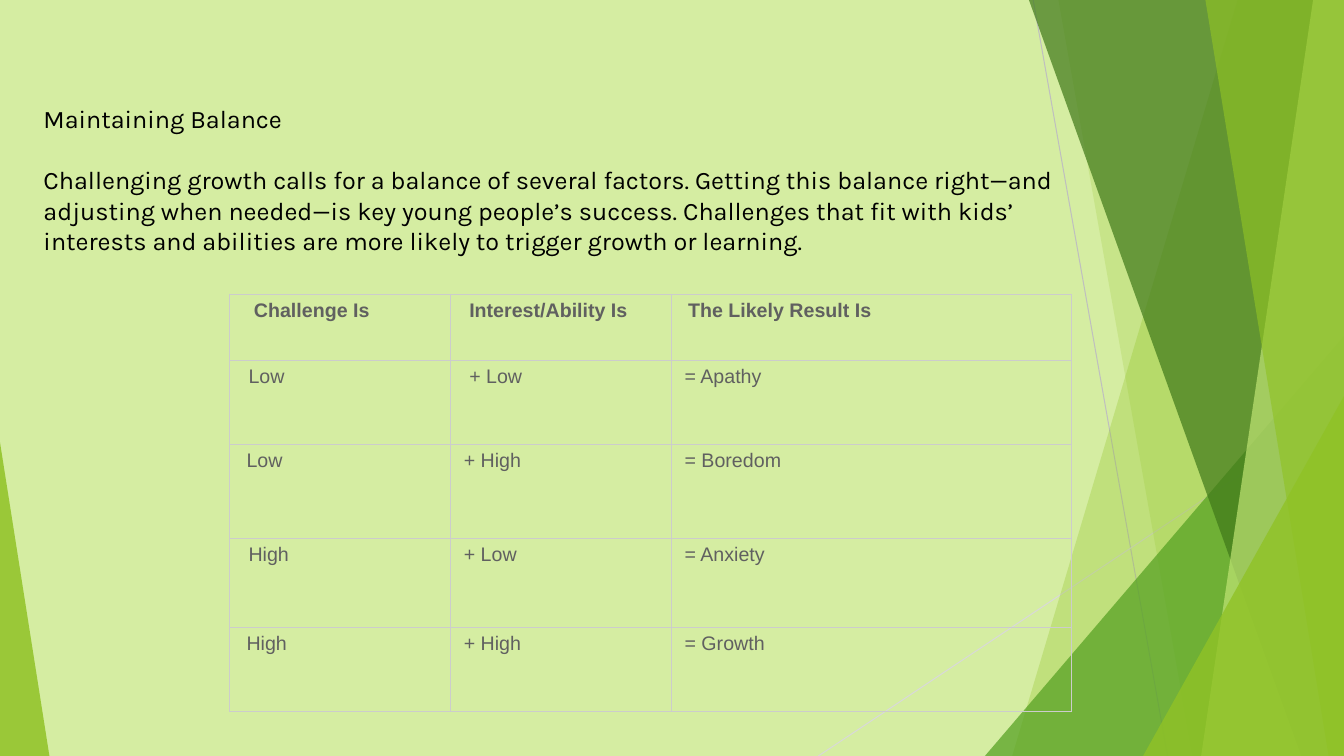
import pptx
import pptx.dml.color
import pptx.enum.shapes
import pptx.enum.text
import pptx.oxml.ns
import pptx.util
from lxml import etree

Pt = pptx.util.Pt
qn = pptx.oxml.ns.qn

COLORS = {
    "page": "D5EDA2", "lime": "90C226", "green": "54A021", "dark": "3F7819",
    "pale": "C0E474", "gray": "BFBFBF", "light": "D9D9D9", "grid": "CCCCCC",
    "cell": "606060", "text": "000000",
}

# Slanted bands: x at the top, x at the foot, colour, opacity in percent
BACK = [(884, 723, "lime", 30), (756, 852, "lime", 20)]
FRONT = [(735, 929.5, "dark", 70), (938, 858, "pale", 70), (861, 949, "lime", 65)]

COLS = [157.7, 157.7, 285.8]
ROWS = [47.5, 59.8, 67, 64.1, 59.8]
# Each cell: text, extra indent
CELLS = [
    [("Challenge Is", 7.8), ("Interest/Ability Is", 3.9), ("The Likely Result Is", 2.5)],
    [("Low", 3.9), ("+ Low", 3.9), ("= Apathy", 0)],
    [("Low", 2.5), ("+ High", 0), ("= Boredom", 0)],
    [("High", 3.9), ("+ Low", 0), ("= Anxiety", 0)],
    [("High", 2.5), ("+ High", 0), ("= Growth", 0)],
]
TITLE = "Maintaining Balance"
BODY = (
    "Challenging growth calls for a balance of several factors. Getting this "
    "balance right—and adjusting when needed—is key young people’s success. "
    "Challenges that fit with kids’ interests and abilities are more likely to "
    "trigger growth or learning."
)


def rgb(name):
    return pptx.dml.color.RGBColor.from_string(COLORS[name])


def paint(shape, color, alpha):
    """Fill a shape with a see-through colour, without line or shadow."""
    shape.shadow.inherit = False
    shape.fill.solid()
    shape.fill.fore_color.rgb = rgb(color)
    shape.line.fill.background()
    tone = shape.element.spPr.find(".//" + qn("a:srgbClr"))
    etree.SubElement(tone, qn("a:alpha"), val=str(alpha * 1000))


def add_band(slide, box, top, foot, color, alpha):
    """Draw a band that reaches from a slanted edge to the right of the box."""
    x, y, w, h = box
    pen = slide.shapes.build_freeform(Pt(x + top), Pt(y), scale=1.0)
    edge = [(x + w, y), (x + w, y + h), (x + foot, y + h)]
    pen.add_line_segments([(Pt(a), Pt(b)) for a, b in edge], close=True)
    paint(pen.convert_to_shape(), color, alpha)


def add_wedge(slide, box, left, width, height, peak, color, alpha):
    """Stand a triangle on the foot of the box; peak is 0 (left) to 1 (right)."""
    x, y, w, h = box
    wedge = slide.shapes.add_shape(
        pptx.enum.shapes.MSO_SHAPE.ISOSCELES_TRIANGLE,
        Pt(x + left), Pt(y + h - height), Pt(width), Pt(height))
    wedge.adjustments[0] = peak
    paint(wedge, color, alpha)


def add_line(slide, box, start, end, color):
    x, y, w, h = box
    line = slide.shapes.add_connector(
        pptx.enum.shapes.MSO_CONNECTOR.STRAIGHT,
        Pt(x + start[0]), Pt(y + start[1]), Pt(x + end[0]), Pt(y + end[1]))
    line.line.color.rgb = rgb(color)
    line.line.width = Pt(0.75)
    etree.SubElement(line.element.spPr, qn("a:effectLst"))


def add_decor(slide, box):
    w, h = box[2:]
    add_line(slide, box, (738, 0), (834, h), "gray")
    add_line(slide, box, (w, 290), (584.6, h), "light")
    for band in BACK:
        add_band(slide, box, *band)
    add_wedge(slide, box, 703.5, 256.5, 300, 1, "green", 72)
    for band in FRONT:
        add_band(slide, box, *band)
    add_wedge(slide, box, 816.5, 143.5, 257, 1, "lime", 80)
    add_wedge(slide, box, 0, 35.3, 224, 0, "lime", 85)


def add_rules(cell):
    """Draw the thin line on all four sides of a cell."""
    props = cell._tc.get_or_add_tcPr()
    for side in "LRTB":
        rule = etree.SubElement(props, qn("a:ln" + side), w=str(Pt(0.75)))
        fill = etree.SubElement(rule, qn("a:solidFill"))
        etree.SubElement(fill, qn("a:srgbClr"), val=COLORS["grid"])


def add_grid(slide, box):
    frame = slide.shapes.add_table(len(ROWS), len(COLS), *map(Pt, box))
    table = frame.table
    table.first_row = table.horz_banding = False
    for col, width in zip(table.columns, COLS):
        col.width = Pt(width)
    for r, height in enumerate(ROWS):
        table.rows[r].height = Pt(height)
        for c, (text, indent) in enumerate(CELLS[r]):
            cell = table.cell(r, c)
            cell.margin_left = Pt(9.4 + indent)
            cell.margin_right = Pt(9.4)
            cell.margin_top = cell.margin_bottom = Pt(3.6)
            add_rules(cell)
            cell.fill.background()
            cell.text = text
            font = cell.text_frame.paragraphs[0].font
            font.name, font.size, font.bold = "Arial", Pt(14), r == 0
            font.color.rgb = rgb("cell")


def add_intro(slide, box):
    frame = slide.shapes.add_textbox(*map(Pt, box)).text_frame
    frame.word_wrap = True
    frame.vertical_anchor = pptx.enum.text.MSO_ANCHOR.BOTTOM
    head, body = frame.paragraphs[0], frame.add_paragraph()
    head.text, body.text = TITLE, BODY
    body.space_before = Pt(22)
    for para in (head, body):
        para.font.name, para.font.size = "Karla", Pt(18)
        para.font.color.rgb = rgb("text")


def main():
    deck = pptx.Presentation()
    deck.slide_width, deck.slide_height = Pt(960), Pt(540)
    slide = deck.slides.add_slide(deck.slide_layouts[6])
    slide.background.fill.solid()
    slide.background.fill.fore_color.rgb = rgb("page")
    add_decor(slide, (0, 0, 960, 540))
    add_grid(slide, (164.2, 210.2, sum(COLS), sum(ROWS)))
    add_intro(slide, (24, 26, 776, 160))
    deck.save("out.pptx")


if __name__ == "__main__":
    main()
